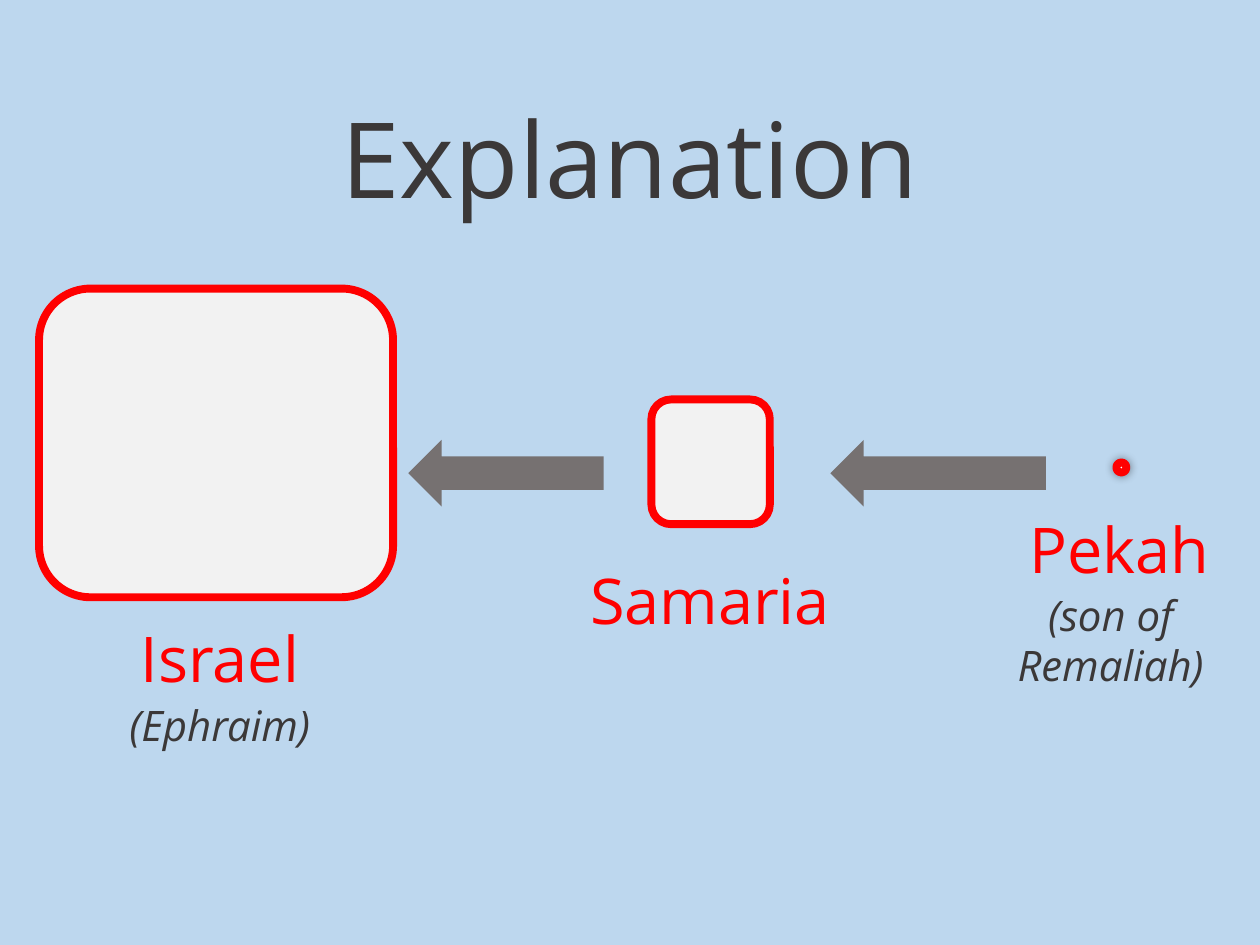
from lxml import etree
from pptx import Presentation
from pptx.dml.color import RGBColor
from pptx.enum import shapes, text
from pptx.oxml import ns
from pptx.util import Inches, Pt

COLORS = {"sky": "BDD7EE", "dark": "3B3838", "red": "FF0000",
          "arrow": "767171", "panel": "F2F2F2", "white": "FFFFFF"}
KIND = shapes.MSO_SHAPE


def add_shape(kind, box, fill, line=None):
    sp = s.shapes.add_shape(kind, *map(Inches, box))
    sp.shadow.inherit = False
    sp.fill.solid()
    sp.fill.fore_color.rgb = RGBColor.from_string(COLORS[fill])
    if line:
        sp.line.color.rgb = RGBColor.from_string(COLORS[line])
        sp.line.width = Pt(4.5)
    else:
        sp.line.fill.background()
    return sp


def add_label(words, box, size, color, italic=False):
    tf = s.shapes.add_textbox(*map(Inches, box)).text_frame
    tf.word_wrap = True
    tf.auto_size = text.MSO_AUTO_SIZE.SHAPE_TO_FIT_TEXT
    p = tf.paragraphs[0]
    p.text = words
    p.alignment = text.PP_ALIGN.CENTER
    p.font.name = "Open Sans"
    p.font.size = Pt(size)
    p.font.italic = italic
    p.font.color.rgb = RGBColor.from_string(COLORS[color])


prs = Presentation()
prs.slide_width, prs.slide_height = Inches(10), Inches(7.5)
s = prs.slides.add_slide(prs.slide_layouts[6])

add_shape(KIND.RECTANGLE, (0, 0, 10, 7.5), "sky")
add_label("Explanation", (0, 0.69, 10, 1.11), 60, "dark")

for box in [(5.17, 3.17, 0.94, 0.99), (0.31, 2.29, 2.81, 2.45)]:
    add_shape(KIND.ROUNDED_RECTANGLE, box, "panel", "red")

for left, width in [(3.24, 1.55), (6.59, 1.71)]:
    arrow = add_shape(KIND.RIGHT_ARROW, (left, 3.49, width, 0.53), "arrow")
    arrow.rotation = 180

dot = add_shape(KIND.OVAL, (8.86, 3.67, 0.08, 0.08), "white", "red")
effects = dot._element.spPr.find(ns.qn("a:effectLst"))
glow = etree.SubElement(effects, ns.qn("a:outerShdw"), blurRad=str(Pt(5)), dist="0", dir="0")
black = etree.SubElement(glow, ns.qn("a:srgbClr"), val="000000")
etree.SubElement(black, ns.qn("a:alpha"), val="40000")

for name, box in [("Samaria", (3.85, 4.41, 3.57, 0.71)),
                  ("Israel", (0.34, 4.87, 2.81, 0.71)),
                  ("Pekah", (7.48, 4, 2.81, 0.71))]:
    add_label(name, box, 36, "red")

for note, box in [("(Ephraim)", (0.26, 5.5, 2.97, 0.5)),
                  ("(son of Remaliah)", (7.59, 4.63, 2.45, 0.91))]:
    add_label(note, box, 24, "dark", italic=True)

prs.save("out.pptx")
